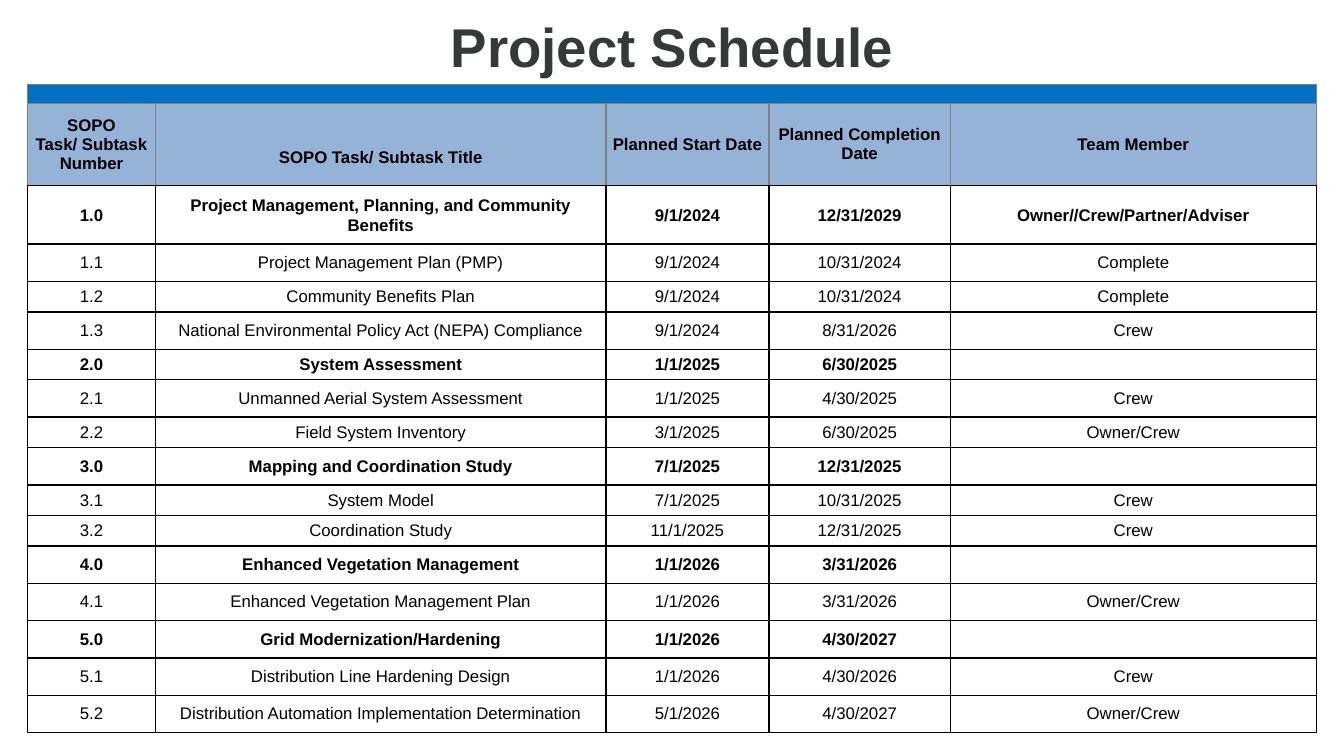
from dataclasses import dataclass

import lxml.etree
import pptx
import pptx.dml.color
import pptx.enum.text
import pptx.oxml.ns
import pptx.util

Cm, Pt = pptx.util.Cm, pptx.util.Pt
RGB = pptx.dml.color.RGBColor.from_string
qn = pptx.oxml.ns.qn
CENTER = pptx.enum.text.PP_ALIGN.CENTER
MIDDLE = pptx.enum.text.MSO_ANCHOR.MIDDLE


@dataclass(frozen=True)
class Theme:
    font: str = "Arial"
    heading: str = "373838"
    ink: str = "000000"
    band: str = "0070C0"
    header: str = "95B3D7"
    header_line: str = "808080"
    heading_size: int = 39
    body_size: int = 12
    empty_size: int = 10


theme = Theme()


def set_font(paragraph, size, color, bold):
    paragraph.alignment = CENTER
    for run in paragraph.runs:
        run.font.name = theme.font
        run.font.size = Pt(size)
        run.font.bold = bold
        run.font.color.rgb = RGB(color)
    if not paragraph.runs:
        ending = lxml.etree.SubElement(paragraph._p, qn("a:endParaRPr"))
        ending.set("sz", str(theme.empty_size * 100))


def set_borders(cell, colors):
    properties = cell._tc.get_or_add_tcPr()
    for side, color in zip(("lnL", "lnR", "lnT", "lnB"), colors):
        line = lxml.etree.SubElement(properties, qn(f"a:{side}"), w=str(Pt(1)))
        fill = lxml.etree.SubElement(line, qn("a:solidFill"))
        lxml.etree.SubElement(fill, qn("a:srgbClr"), val=color)


presentation = pptx.Presentation()
presentation.slide_width, presentation.slide_height = Cm(33.87), Cm(19.05)
slide = presentation.slides.add_slide(presentation.slide_layouts[5])

heading = slide.shapes.title
heading.left, heading.top, heading.width, heading.height = Cm(1.04), Cm(-0.03), Cm(31.8), Cm(2.16)
heading.text_frame.text = "Project Schedule"
heading.text_frame.vertical_anchor = pptx.enum.text.MSO_ANCHOR.BOTTOM
heading.text_frame.paragraphs[0].line_spacing = 0.9
set_font(heading.text_frame.paragraphs[0], theme.heading_size, theme.heading, True)

column_titles = ("SOPO\nTask/ Subtask Number", "SOPO Task/ Subtask Title", "Planned Start Date",
                 "Planned Completion Date", "Team Member")
tasks = [
    ("1.0", "Project Management, Planning, and Community Benefits", "9/1/2024", "12/31/2029",
     "Owner//Crew/Partner/Adviser", 1.48),
    ("1.1", "Project Management Plan (PMP)", "9/1/2024", "10/31/2024", "Complete", 0.94),
    ("1.2", "Community Benefits Plan", "9/1/2024", "10/31/2024", "Complete", 0.77),
    ("1.3", "National Environmental Policy Act (NEPA) Compliance", "9/1/2024", "8/31/2026", "Crew", 0.94),
    ("2.0", "System Assessment", "1/1/2025", "6/30/2025", "", 0.77),
    ("2.1", "Unmanned Aerial System Assessment", "1/1/2025", "4/30/2025", "Crew", 0.94),
    ("2.2", "Field System Inventory", "3/1/2025", "6/30/2025", "Owner/Crew", 0.77),
    ("3.0", "Mapping and Coordination Study", "7/1/2025", "12/31/2025", "", 0.94),
    ("3.1", "System Model", "7/1/2025", "10/31/2025", "Crew", 0.77),
    ("3.2", "Coordination Study", "11/1/2025", "12/31/2025", "Crew", 0.77),
    ("4.0", "Enhanced Vegetation Management", "1/1/2026", "3/31/2026", "", 0.94),
    ("4.1", "Enhanced Vegetation Management Plan", "1/1/2026", "3/31/2026", "Owner/Crew", 0.94),
    ("5.0", "Grid Modernization/Hardening", "1/1/2026", "4/30/2027", "", 0.94),
    ("5.1", "Distribution Line Hardening Design", "1/1/2026", "4/30/2026", "Crew", 0.94),
    ("5.2", "Distribution Automation Implementation Determination", "5/1/2026", "4/30/2027",
     "Owner/Crew", 0.94),
]
rows = [("",) * 5 + (0.48,), column_titles + (2.06,)] + tasks
column_widths = (3.23, 11.35, 4.11, 4.57, 9.22)

schedule = slide.shapes.add_table(
    len(rows), len(column_widths), Cm(0.69), Cm(2.13),
    Cm(sum(column_widths)), Cm(sum(row[-1] for row in rows))).table
schedule.first_row = schedule.horz_banding = False
for column, width in zip(schedule.columns, column_widths):
    column.width = Cm(width)

for row_index, (*texts, height) in enumerate(rows):
    schedule.rows[row_index].height = Cm(height)
    is_band, is_header = row_index == 0, row_index == 1
    bold = is_header or texts[0].endswith(".0")
    side_line = theme.header_line if is_band or is_header else theme.ink
    top_line = theme.ink if row_index > 1 else theme.header_line
    bottom_line = theme.header_line if is_band else theme.ink
    for column_index, text in enumerate(texts):
        cell = schedule.cell(row_index, column_index)
        cell.margin_left = cell.margin_right = cell.margin_top = cell.margin_bottom = 0
        cell.vertical_anchor = MIDDLE
        set_borders(cell, (side_line, side_line, top_line, bottom_line))
        if is_band or is_header:
            cell.fill.solid()
            cell.fill.fore_color.rgb = RGB(theme.band if is_band else theme.header)
        else:
            cell.fill.background()
        cell.text_frame.text = text
        for paragraph in cell.text_frame.paragraphs:
            if row_index == 2:
                paragraph.line_spacing = 1.07
            set_font(paragraph, theme.body_size, theme.ink, bold)

schedule.cell(0, 0).merge(schedule.cell(0, len(column_widths) - 1))
schedule.cell(1, 1).margin_top = Cm(0.65)

presentation.save("out.pptx")
